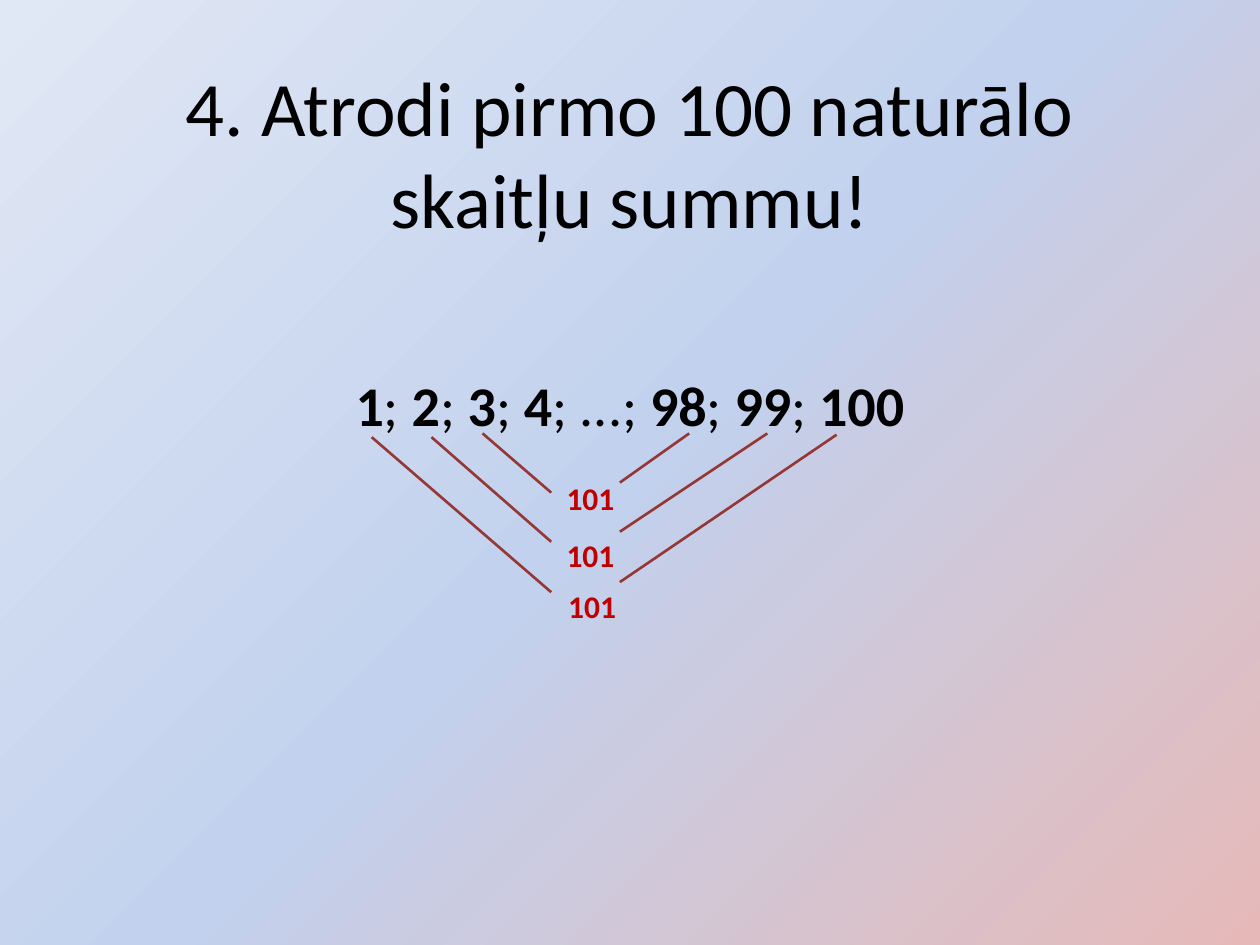
import pptx
import pptx.util
import pptx.oxml
import pptx.oxml.ns
import pptx.dml.color
import pptx.enum.text
import pptx.enum.shapes

BLACK = pptx.dml.color.RGBColor(0x00, 0x00, 0x00)
RED = pptx.dml.color.RGBColor(0xC0, 0x00, 0x00)
DARK_RED = pptx.dml.color.RGBColor(0x95, 0x37, 0x35)
PINK = pptx.dml.color.RGBColor(0xE6, 0xB9, 0xB8)
BLUE = pptx.dml.color.RGBColor(0xC2, 0xD1, 0xED)
PALE = pptx.dml.color.RGBColor(0xE1, 0xE8, 0xF5)


class Deck:
    """Style and current slide; lengths are cells of a 100 x 75 grid."""
    FONT = "Calibri"
    COLS, ROWS = 100, 75

    def __init__(self):
        self.prs = pptx.Presentation()
        self.prs.slide_width = pptx.util.Inches(10)
        self.prs.slide_height = pptx.util.Inches(7.5)
        self.s = self.prs.slides.add_slide(self.prs.slide_layouts[6])

    def x(self, cols):
        return round(self.prs.slide_width * cols / self.COLS)

    def y(self, rows):
        return round(self.prs.slide_height * rows / self.ROWS)

    def background(self, *colors):
        """Radial gradient spreading from the bottom right corner."""
        self.s.background.fill.gradient()
        old = self.s.element.find(".//" + pptx.oxml.ns.qn("a:gradFill"))
        step = 100000 // (len(colors) - 1)
        stops = "".join(f'<a:gs pos="{i * step}"><a:srgbClr val="{c}"/></a:gs>'
                        for i, c in enumerate(colors))
        new = pptx.oxml.parse_xml(
            f'<a:gradFill {pptx.oxml.ns.nsdecls("a")}><a:gsLst>{stops}</a:gsLst>'
            '<a:path path="circle"><a:fillToRect l="100000" t="100000"/></a:path>'
            '<a:tileRect r="-100000" b="-100000"/></a:gradFill>')
        old.getparent().replace(old, new)

    def text(self, box, runs, size, color=BLACK, middle=False, inset=0.5, side=1):
        """Centred text from (words, bold) runs; inset and side are margins."""
        left, top, width, height = box
        sp = self.s.shapes.add_textbox(self.x(left), self.y(top),
                                       self.x(width), self.y(height))
        tf = sp.text_frame
        tf.word_wrap = True
        tf.margin_top = self.y(inset)
        tf.margin_left = tf.margin_right = self.x(side)
        if middle:
            tf.vertical_anchor = pptx.enum.text.MSO_ANCHOR.MIDDLE
        p = tf.paragraphs[0]
        p.alignment = pptx.enum.text.PP_ALIGN.CENTER
        for words, bold in runs:
            r = p.add_run()
            r.text = words
            r.font.name = self.FONT
            r.font.size = pptx.util.Pt(size)
            r.font.bold = bold
            r.font.color.rgb = color

    def line(self, start, end):
        cn = self.s.shapes.add_connector(
            pptx.enum.shapes.MSO_CONNECTOR.STRAIGHT,
            self.x(start[0]), self.y(start[1]), self.x(end[0]), self.y(end[1]))
        cn.line.color.rgb = DARK_RED
        cn.line.width = pptx.util.Pt(1.5)
        cn.element.spPr.append(pptx.oxml.parse_xml(
            f'<a:effectLst {pptx.oxml.ns.nsdecls("a")}/>'))


def main():
    deck = Deck()
    deck.background(PINK, BLUE, PALE)

    # Title
    deck.text((5, 3, 90, 18.1),
              [("4. Atrodi pirmo 100 naturālo skaitļu summu!", False)],
              44, middle=True, side=5)

    # Number row: bold terms, plain separators
    terms = ["1", "; ", "2", "; ", "3", "; ", "4", "; ...; ",
             "98", "; ", "99", "; ", "100"]
    deck.text((5, 22.7, 90, 44.3), [(t, t.isdigit()) for t in terms],
              32, inset=6.72)

    # Pairs, outermost first: left term, right term, end rows, sum label
    pairs = [((29.5, 34.7), (66.4, 34.5), 47.0, 46.2, (43.85, 46.1)),
             ((34.25, 34.7), (60.9, 34.4), 43.0, 42.2, (43.72, 42.05)),
             ((38.3, 34.4), (54.7, 34.4), 39.1, 38.3, (43.72, 37.5))]
    for first, last, left_end, right_end, label in pairs:
        deck.line(first, (43.75, left_end))
        deck.line(last, (49.2, right_end))
        deck.text((*label, 6.3, 4), [("101", True)], 18, RED)

    deck.prs.save("out.pptx")


if __name__ == "__main__":
    main()
